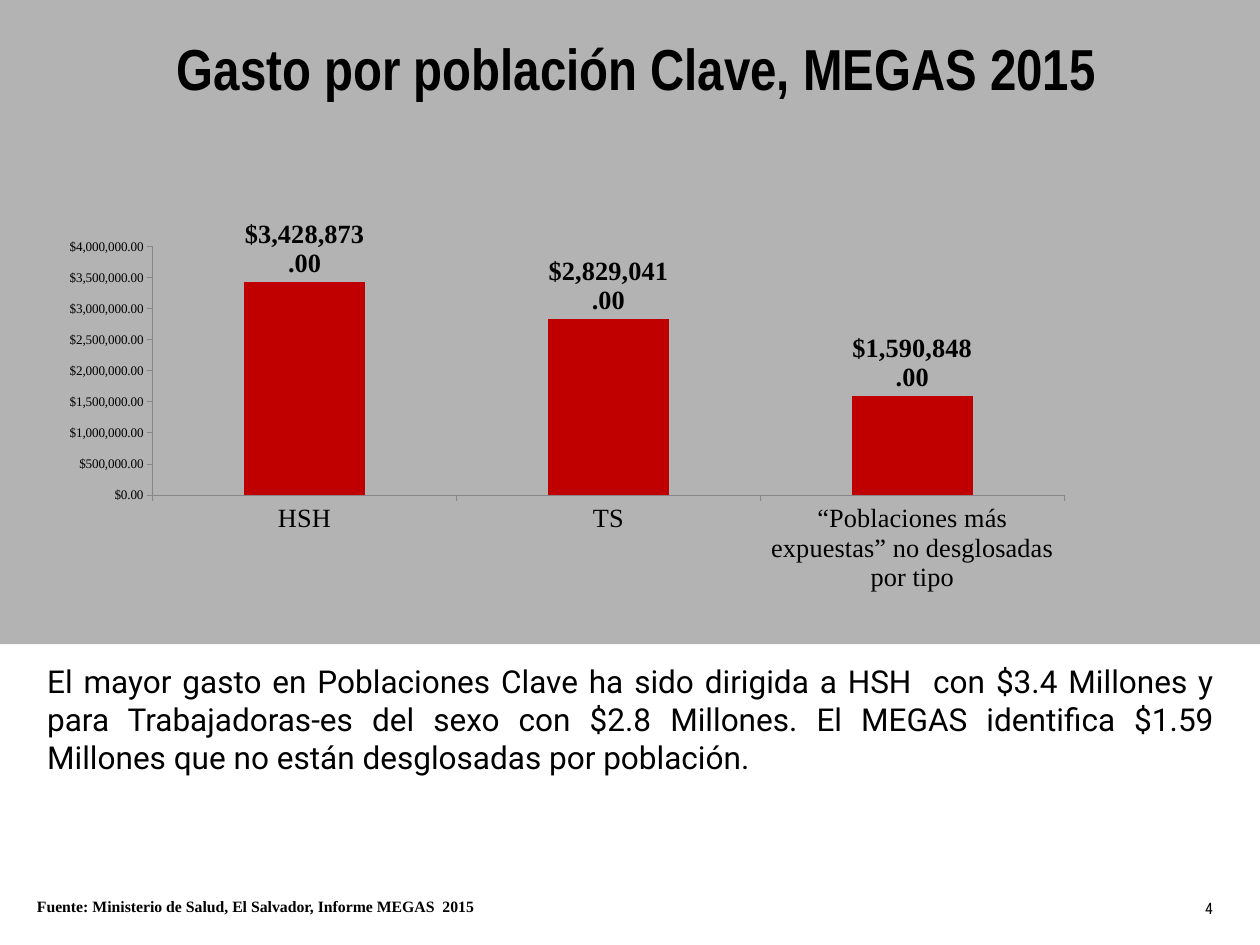
from lxml import etree
from pptx import Presentation
from pptx.chart.data import CategoryChartData
from pptx.dml.color import RGBColor
from pptx.enum import chart as ch, shapes, text
from pptx.util import Pt

THEME = {
    "black": RGBColor(0, 0, 0),
    "white": RGBColor(255, 255, 255),
    "panel": RGBColor(0xB3, 0xB3, 0xB3),
    "bar": RGBColor(0xC0, 0, 0),
    "axis": RGBColor(0x87, 0x87, 0x87),
    "title": {"name": "Arial Narrow", "size": Pt(44), "bold": True},
    "body": {"name": "Roboto", "size": Pt(24), "bold": False},
    "source": {"name": "Times New Roman", "size": Pt(12), "bold": True},
    "number": {"name": "Roboto Condensed", "size": Pt(12), "bold": False},
    "ticks": {"name": "Times New Roman", "size": Pt(10), "bold": False},
    "categories": {"name": "Times New Roman", "size": Pt(20), "bold": False},
    "values": {"name": "Times New Roman", "size": Pt(20), "bold": True},
}
MONEY = "[$$-440A]#,##0.00"


def style_font(font, role):
    for attribute, value in THEME[role].items():
        setattr(font, attribute, value)
    font.color.rgb = THEME["black"]


def write(shape, words, role, alignment):
    frame = shape.text_frame
    frame.word_wrap = True
    frame.auto_size = text.MSO_AUTO_SIZE.NONE
    frame.vertical_anchor = text.MSO_ANCHOR.TOP
    paragraph = frame.paragraphs[0]
    paragraph.alignment = alignment
    run = paragraph.add_run()
    run.text = words
    style_font(run.font, role)


presentation = Presentation()
presentation.slide_width, presentation.slide_height = Pt(959), Pt(719.3)
slide = presentation.slides.add_slide(presentation.slide_layouts[5])

# Source strip and grey panel, behind the title
rectangles = []
for box, color in (((21.6, 679.7, 915.8, 39.6), "white"), ((0, 0, 959, 490.3), "panel")):
    shape = slide.shapes.add_shape(shapes.MSO_SHAPE.RECTANGLE, *map(Pt, box))
    shape.shadow.inherit = False
    shape.fill.solid()
    shape.fill.fore_color.rgb = THEME[color]
    shape.line.fill.background()
    rectangles.append(shape)
source, panel = rectangles
source.text_frame.margin_left = source.text_frame.margin_right = Pt(6.5)
source.text_frame.margin_top = source.text_frame.margin_bottom = Pt(3)
write(source, "Fuente: Ministerio de Salud, El Salvador, Informe MEGAS  2015",
      "source", text.PP_ALIGN.LEFT)

title = slide.shapes.title
title.left, title.top, title.width, title.height = map(Pt, (54.7, 21.6, 860.4, 60.5))
write(title, "Gasto por población Clave, MEGAS 2015", "title", text.PP_ALIGN.CENTER)
panel._element.addnext(title._element)

body = slide.shapes.add_textbox(Pt(28.8), Pt(500.4), Pt(902.2), Pt(144))
write(body, "El mayor gasto en Poblaciones Clave ha sido dirigida a HSH  con $3.4 Millones "
      "y para Trabajadoras-es del sexo con $2.8 Millones. El MEGAS identifica $1.59 "
      "Millones que no están desglosadas por población.", "body", text.PP_ALIGN.JUSTIFY)

number = slide.shapes.add_textbox(Pt(910.1), Pt(680.4), Pt(20.2), Pt(21.6))
write(number, "4", "number", text.PP_ALIGN.JUSTIFY)

# Spending by population
data = CategoryChartData(number_format=MONEY)
data.categories = ["HSH", "TS", "“Poblaciones más expuestas” no desglosadas por tipo"]
data.add_series("Gasto", (3428873, 2829041, 1590848))
chart = slide.shapes.add_chart(ch.XL_CHART_TYPE.COLUMN_CLUSTERED, Pt(37.4), Pt(167),
                               Pt(788.4), Pt(287.3), data).chart
chart.has_legend = chart.has_title = False
style_font(chart.font, "ticks")

for axis, role in ((chart.category_axis, "categories"), (chart.value_axis, "ticks")):
    axis.has_major_gridlines = False
    axis.major_tick_mark = ch.XL_TICK_MARK.OUTSIDE
    axis.minor_tick_mark = ch.XL_TICK_MARK.NONE
    axis.format.line.color.rgb = THEME["axis"]
    axis.format.line.width = Pt(0.75)
    style_font(axis.tick_labels.font, role)
scale = chart.value_axis
scale.minimum_scale, scale.maximum_scale, scale.major_unit = 0, 4000000, 500000
scale.tick_labels.number_format = MONEY
scale.tick_labels.number_format_is_linked = False

plot = chart.plots[0]
plot.gap_width = 150
plot.vary_by_categories = False
bars = plot.series[0]
bars.format.fill.solid()
bars.format.fill.fore_color.rgb = THEME["bar"]
labels = bars.data_labels
labels.show_value = True
labels.position = ch.XL_LABEL_POSITION.OUTSIDE_END
labels.number_format = MONEY
labels.number_format_is_linked = False
style_font(labels.font, "values")

# Fixed inner plot area, as fractions of the chart
plot_area = chart._chartSpace.chart.plotArea
namespace = "{%s}" % plot_area.nsmap["c"]
for old_layout in plot_area.findall(namespace + "layout"):
    plot_area.remove(old_layout)
layout = etree.Element(namespace + "layout")
manual = etree.SubElement(layout, namespace + "manualLayout")
for tag, value in (("layoutTarget", "inner"), ("xMode", "edge"), ("yMode", "edge"),
                   ("x", "0.1"), ("y", "0.07"), ("w", "0.88"), ("h", "0.66")):
    etree.SubElement(manual, namespace + tag, val=value)
plot_area.insert(0, layout)

presentation.save("out.pptx")
